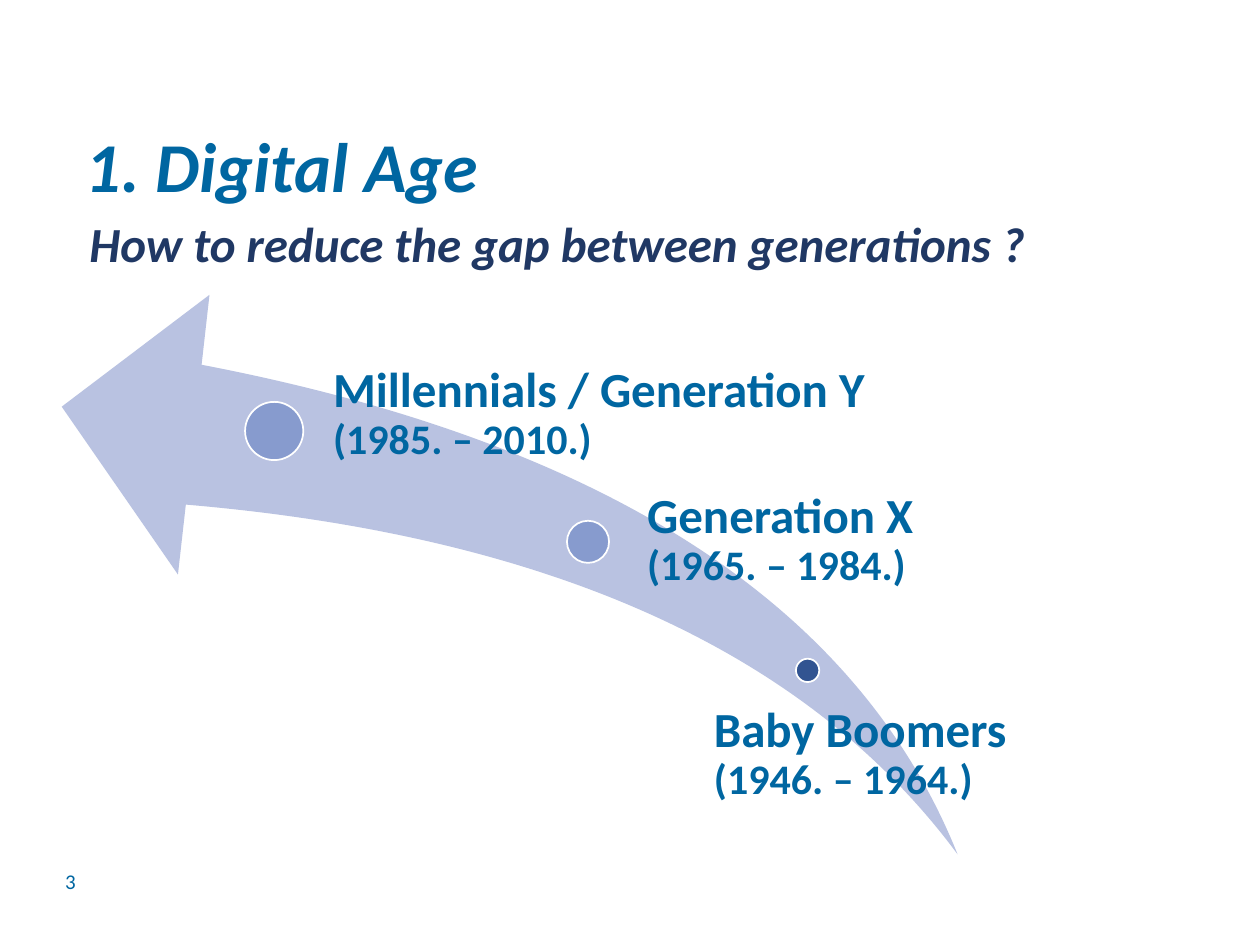
from lxml import etree
from pptx import Presentation
from pptx import util as u
from pptx.dml.color import RGBColor
from pptx.enum import shapes, text
from pptx.oxml.ns import qn

HEX = {"blue": "0066A1", "navy": "203864", "arrow": "B9C2E1",
       "dark": "325491", "mid": "879BCE", "white": "FFFFFF"}

TITLE = "1. Digital Age"
LEAD = "How to reduce the gap between generations ?"
PAGE = "3"
ARROW = (35.3, 168.5, 511.9, 319.7)

# name, years, dot centre, dot size as share of arrow width, dot colour,
# label box, label left inset
AGES = [
    ("Baby Boomers", "(1946. – 1964.)", (461.5, 383.1), 0.026, "dark",
     (401, 403.2, 192.2, 61.2), 7),
    ("Generation X", "(1965. – 1984.)", (336, 309.6), 0.047, "mid",
     (357.1, 280.8, 205.2, 70.6), 12.7),
    ("Millennials / Generation Y", "(1985. – 2010.)", (156.7, 246.3), 0.065, "mid",
     (172.8, 208.8, 329, 72), 17.6),
]


def apply(obj, **vals):
    for key, val in vals.items():
        setattr(obj, key, val)


def rgb(name):
    return RGBColor.from_string(HEX[name])


def place(box, area):
    apply(box, **dict(zip(("left", "top", "width", "height"), map(u.Pt, area))))


def write(par, words, size, tint="blue", **style):
    run = par.add_run()
    run.text = words
    apply(run.font, name="Calibri", size=u.Pt(size), **style)
    run.font.color.rgb = rgb(tint)


def head(box, area, words, size, tint, anchor):
    """Fill a placeholder with one left-aligned, unbulleted line."""
    place(box, area)
    apply(box.text_frame, auto_size=text.MSO_AUTO_SIZE.NONE,
          word_wrap=True, vertical_anchor=anchor)
    par = box.text_frame.paragraphs[0]
    props = par._p.get_or_add_pPr()
    props.set("marL", "0")
    props.set("indent", "0")
    etree.SubElement(props, qn("a:buNone"))
    apply(par, alignment=text.PP_ALIGN.LEFT, line_spacing=0.9, space_before=u.Pt(0))
    write(par, words, size, tint, bold=True, italic=True)


def draw(slide, kind, area, tint):
    form = slide.shapes.add_shape(kind, *map(u.Pt, area))
    form.shadow.inherit = False
    form.fill.solid()
    form.fill.fore_color.rgb = rgb(tint)
    return form


def label(slide, name, years, area, inset):
    frame = slide.shapes.add_textbox(*map(u.Pt, area)).text_frame
    apply(frame, word_wrap=True, margin_left=u.Pt(inset),
          margin_top=0, margin_right=0, margin_bottom=0)
    par = frame.paragraphs[0]
    par.line_spacing = 0.9
    write(par, name, 28, bold=True)
    par.add_line_break()
    write(par, years, 24, bold=True)


def main():
    deck = Presentation()
    apply(deck, slide_width=u.Pt(720), slide_height=u.Pt(540))
    slide = deck.slides.add_slide(deck.slide_layouts[1])
    head(slide.shapes.title, (41.8, 56.9, 620.6, 65.5), TITLE, 40, "blue",
         text.MSO_ANCHOR.BOTTOM)
    head(slide.placeholders[1], (43.9, 122.4, 620.6, 53.3), LEAD, 28, "navy",
         text.MSO_ANCHOR.TOP)

    num = slide.shapes.add_textbox(*map(u.Pt, (30.2, 488.9, 38.2, 28.8))).text_frame
    apply(num, word_wrap=True, vertical_anchor=text.MSO_ANCHOR.MIDDLE)
    write(num.paragraphs[0], PAGE, 12)

    kind = shapes.MSO_SHAPE
    arrow = draw(slide, kind.SWOOSH_ARROW, ARROW, "arrow")
    arrow.line.fill.background()
    arrow.adjustments[0] = arrow.adjustments[1] = 0.25
    arrow.element.spPr.find(qn("a:xfrm")).set("flipH", "1")

    for name, years, (x, y), share, tint, area, inset in AGES:
        size = share * ARROW[2]
        dot = draw(slide, kind.OVAL, (x - size / 2, y - size / 2, size, size), tint)
        dot.line.color.rgb = rgb("white")
        dot.line.width = u.Pt(1)
        label(slide, name, years, area, inset)

    deck.save("out.pptx")


if __name__ == "__main__":
    main()
